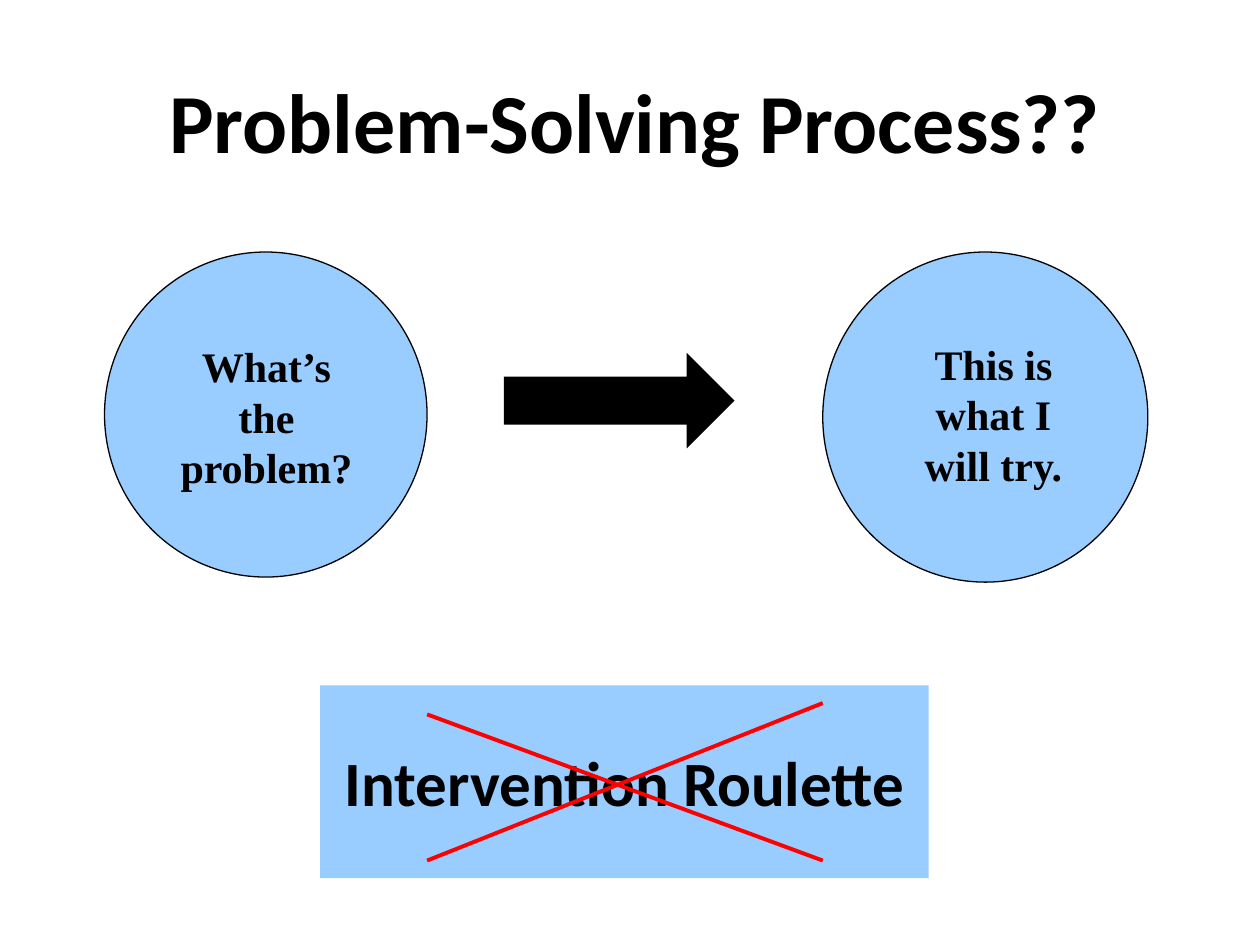
from lxml.etree import SubElement
from pptx import Presentation
from pptx.dml.color import RGBColor
from pptx.enum.shapes import MSO_CONNECTOR, MSO_SHAPE
from pptx.enum.text import MSO_ANCHOR, PP_ALIGN
from pptx.oxml.ns import qn
from pptx.util import Inches, Pt

WIDE, HIGH = Inches(10), Inches(7.5)
COLS, ROWS = 100, 75
BLUE, BLACK, RED = "99CCFF", "000000", "FF0000"
SANS, SERIF = "Calibri", "Times New Roman"


def grid(*cells):
    """Turn alternating columns and rows into slide lengths."""
    units = (WIDE / COLS, HIGH / ROWS)
    return [round(cell * units[i % 2]) for i, cell in enumerate(cells)]


def paint(part, color):
    """Colour a fill solidly, or a font or line directly."""
    if hasattr(part, "solid"):
        part.solid()
        part = part.fore_color
    else:
        part = part.color
    part.rgb = RGBColor.from_string(color)


def write(shape, text, size, face):
    frame = shape.text_frame
    frame.text = text
    frame.word_wrap = True
    frame.vertical_anchor = MSO_ANCHOR.MIDDLE
    for para in frame.paragraphs:
        para.alignment = PP_ALIGN.CENTER
        for run in para.runs:
            run.font.size, run.font.name, run.font.bold = Pt(size), face, True
            paint(run.font, BLACK)


def label(slide, cells, text, size, face):
    write(slide.shapes.add_textbox(*grid(*cells)), text, size, face)


def block(slide, kind, cells, fill, line=None):
    shape = slide.shapes.add_shape(kind, *grid(*cells))
    shape.shadow.inherit = False
    paint(shape.fill, fill)
    if line:
        paint(shape.line, line)
        shape.line.width = Pt(0.75)
    else:
        shape.line.fill.background()
    return shape


def stroke(slide, ends):
    line = slide.shapes.add_connector(MSO_CONNECTOR.STRAIGHT, *grid(*ends))
    paint(line.line, RED)
    line.line.width = Pt(2.25)
    SubElement(line._element.spPr, qn("a:effectLst"))


def main():
    deck = Presentation()
    deck.slide_width, deck.slide_height = WIDE, HIGH
    slide = deck.slides.add_slide(deck.slide_layouts[6])

    label(slide, (8.3, 5, 84.2, 9.1), "Problem-Solving Process??", 48, SANS)

    box = block(slide, MSO_SHAPE.RECTANGLE, (25.4, 54.4, 48.3, 15.3), BLUE)
    write(box, "Intervention Roulette", 36, SANS)
    for ends in ((33.9, 56.7, 65.3, 68.3), (65.3, 55.8, 33.9, 68.3)):
        stroke(slide, ends)

    steps = (
        ((8.3, 20, 25.6, 25.8), (12.8, 26.5), "What’s the problem?"),
        ((65.3, 20, 25.8, 26.2), (70.5, 26.3), "This is what I will try."),
    )
    for disc, spot, text in steps:
        block(slide, MSO_SHAPE.OVAL, disc, BLUE, BLACK)
        label(slide, (*spot, 16.7, 13.1), text, 24, SERIF)
    block(slide, MSO_SHAPE.RIGHT_ARROW, (40, 28, 18.3, 7.6), BLACK)

    deck.save("out.pptx")


if __name__ == "__main__":
    main()
